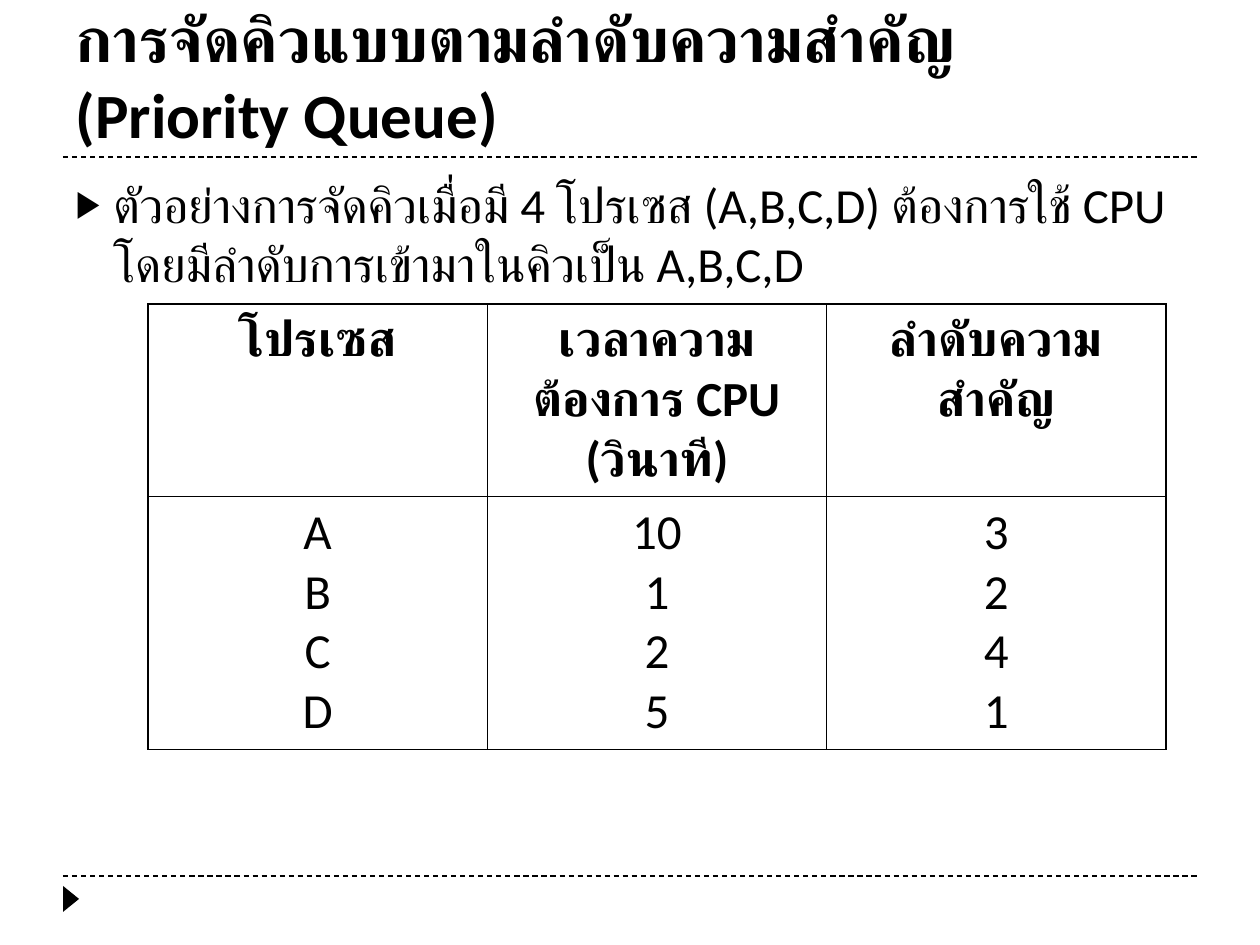
from lxml import etree
from pptx import Presentation
from pptx import util as u
from pptx.dml.color import RGBColor
from pptx.enum import dml, shapes, text
from pptx.oxml import ns

PX = 914400 // 126
COLORS = {"ink": "000000"}
FONT = "Calibri"
TITLE_LINES = ["การจัดคิวแบบตามลำดับความสำคัญ", "(Priority Queue)"]
EXAMPLE = ("ตัวอย่างการจัดคิวเมื่อมี 4 โปรเซส (A,B,C,D) ต้องการใช้ CPU "
           "โดยมีลำดับการเข้ามาในคิวเป็น A,B,C,D")
PROCESS_COLUMNS = {
    "โปรเซส": ["A", "B", "C", "D"],
    "เวลาความต้องการ CPU (วินาที)": ["10", "1", "2", "5"],
    "ลำดับความสำคัญ": ["3", "2", "4", "1"],
}


def px(*lengths):
    return [u.Emu(length * PX) for length in lengths]


def child(parent, tag, **attributes):
    return etree.SubElement(parent, ns.qn(tag), attributes)


class SlideBuilder:
    def __init__(self, slide):
        self.slide = slide
        self.ink = RGBColor.from_string(COLORS["ink"])

    def run(self, paragraph, words, size, bold=False):
        run = paragraph.add_run()
        run.text = words
        font = run.font
        font.name, font.size, font.bold = FONT, u.Pt(size), bold
        font.color.rgb = self.ink
        child(font._element, "a:cs", typeface=FONT)

    def place(self, placeholder, box, anchor):
        placeholder.left, placeholder.top, placeholder.width, placeholder.height = px(*box)
        frame = placeholder.text_frame
        frame.word_wrap = True
        frame.auto_size = text.MSO_AUTO_SIZE.NONE
        frame.vertical_anchor = anchor
        paragraph = frame.paragraphs[0]
        paragraph.alignment = text.PP_ALIGN.LEFT
        return paragraph

    def title(self, lines, box):
        paragraph = self.place(self.slide.shapes.title, box, text.MSO_ANCHOR.BOTTOM)
        for index, line in enumerate(lines):
            if index:
                paragraph.add_line_break()
            self.run(paragraph, line, 36, bold=True)

    def bullet(self, words, box):
        paragraph = self.place(self.slide.placeholders[1], box, text.MSO_ANCHOR.TOP)
        paragraph.space_before = u.Pt(6)
        properties = paragraph._p.get_or_add_pPr()
        indent = u.Inches(0.3)
        properties.set("marL", str(indent))
        properties.set("indent", str(-indent))
        child(child(properties, "a:buClr"), "a:srgbClr", val=COLORS["ink"])
        child(properties, "a:buSzPct", val="76000")
        child(properties, "a:buFont", typeface=FONT)
        child(properties, "a:buChar", char="▶")
        self.run(paragraph, words, 28)

    def dashed_rule(self, left, right, y):
        rule = self.slide.shapes.add_connector(
            shapes.MSO_CONNECTOR.STRAIGHT, *px(left, y, right, y))
        rule.line.color.rgb = self.ink
        rule.line.width = u.Pt(0.75)
        rule.line.dash_style = dml.MSO_LINE.DASH
        child(rule._element.spPr, "a:effectLst")

    def triangle(self, box, rotation):
        shape = self.slide.shapes.add_shape(
            shapes.MSO_SHAPE.ISOSCELES_TRIANGLE, *px(*box))
        shape.rotation = rotation
        shape.shadow.inherit = False
        shape.fill.solid()
        shape.fill.fore_color.rgb = self.ink
        shape.line.fill.background()

    def cell(self, cell, lines, bold):
        properties = cell._tc.get_or_add_tcPr()
        for side in ("a:lnL", "a:lnR", "a:lnT", "a:lnB"):
            border = child(properties, side, w=str(u.Pt(1)))
            child(child(border, "a:solidFill"), "a:srgbClr", val=COLORS["ink"])
        cell.fill.background()
        frame = cell.text_frame
        for index, line in enumerate(lines):
            paragraph = frame.add_paragraph() if index else frame.paragraphs[0]
            paragraph.alignment = text.PP_ALIGN.CENTER
            self.run(paragraph, line, 28, bold)

    def table(self, columns, box, row_heights):
        """Draw one header row and one row that lists each column's values."""
        table = self.slide.shapes.add_table(
            len(row_heights), len(columns), *px(*box)).table
        table.horz_banding = False
        for row, height in zip(table.rows, px(*row_heights)):
            row.height = height
        for index, (heading, values) in enumerate(columns.items()):
            self.cell(table.cell(0, index), [heading], bold=True)
            self.cell(table.cell(1, index), values, bold=False)


def main():
    presentation = Presentation()
    presentation.slide_width, presentation.slide_height = u.Inches(10), u.Inches(7.5)
    slide = presentation.slides.add_slide(presentation.slide_layouts[1])
    builder = SlideBuilder(slide)
    for y in (876, 157):
        builder.dashed_rule(63, 1197, y)
    builder.triangle((58, 891, 26, 16), 90)
    builder.title(TITLE_LINES, (63, 21, 1134, 136))
    builder.bullet(EXAMPLE, (63, 168, 1134, 680))
    builder.table(PROCESS_COLUMNS, (148, 304, 1018, 434), (181, 253))
    presentation.save("out.pptx")


if __name__ == "__main__":
    main()
